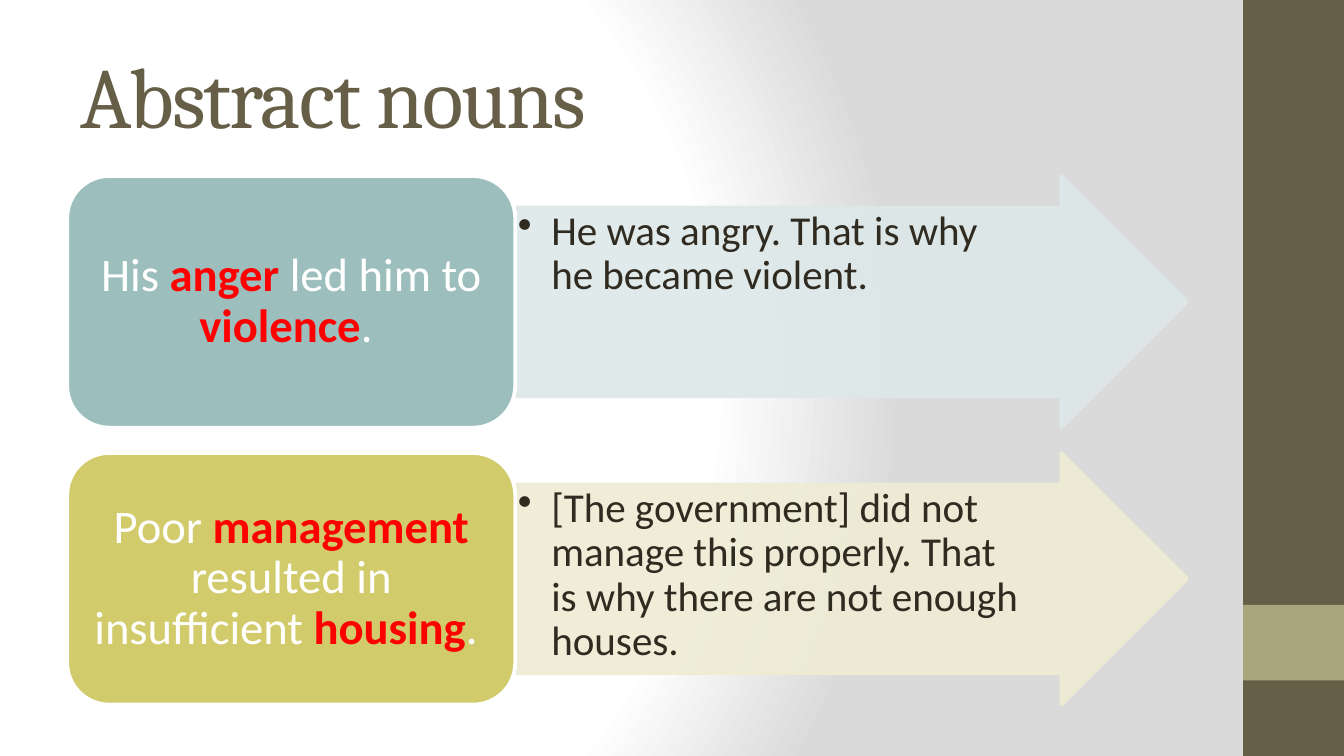
from pptx import Presentation
from pptx.dml.color import RGBColor
from pptx.enum.shapes import MSO_SHAPE
from pptx.enum.text import MSO_ANCHOR, PP_ALIGN
from pptx.oxml import parse_xml
from pptx.oxml.ns import nsdecls
from pptx.oxml.xmlchemy import OxmlElement
from pptx.util import Pt

RECTANGLE = MSO_SHAPE.RECTANGLE
ROUNDED = MSO_SHAPE.ROUNDED_RECTANGLE
RIGHT_ARROW = MSO_SHAPE.RIGHT_ARROW
MIDDLE, TOP = MSO_ANCHOR.MIDDLE, MSO_ANCHOR.TOP
CENTER, LEFT = PP_ALIGN.CENTER, PP_ALIGN.LEFT

BROWN = RGBColor(0x67, 0x5E, 0x47)
KHAKI = RGBColor(0xA9, 0xA5, 0x7C)
DARK = RGBColor(0x2F, 0x2B, 0x20)
WHITE = RGBColor(0xFF, 0xFF, 0xFF)
RED = RGBColor(0xFF, 0x00, 0x00)
TEAL = RGBColor(0x9C, 0xBE, 0xBD)
PALE_TEAL = RGBColor(0xDE, 0xE8, 0xE8)
OLIVE = RGBColor(0xD2, 0xCB, 0x6C)
PALE_OLIVE = RGBColor(0xEE, 0xEC, 0xD4)

SLIDE_W, SLIDE_H = 720, 405
SIDEBAR_X = 666
ROW_X, ROW_W, ROW_H = 36, 600, 134.8
ROW_TOP, ROW_PITCH = 94.3, 148.4
CARD_SHARE = 0.4

# Sentence pieces are (text, highlighted)
EXAMPLES = [
    ([("His ", False), ("anger ", True), ("led him to ", False),
      ("violence", True), (". ", False)],
     "He was angry. That is why he became violent.", TEAL, PALE_TEAL),
    ([("Poor ", False), ("management ", True), ("resulted in insufficient ", False),
      ("housing", True), (". ", False)],
     "[The government] did not manage this properly. That is why there are "
     "not enough houses.", OLIVE, PALE_OLIVE),
]


def apply_format(target, values):
    for name, value in values.items():
        setattr(target, name, value)


def set_frame(frame, anchor, left, top, right, bottom):
    apply_format(frame, {
        "word_wrap": True, "vertical_anchor": anchor,
        "margin_left": Pt(left), "margin_top": Pt(top),
        "margin_right": Pt(right), "margin_bottom": Pt(bottom)})


def add_run(paragraph, text, color, size, font="Calibri", bold=False):
    run = paragraph.add_run()
    run.text = text
    apply_format(run.font, {"name": font, "size": Pt(size), "bold": bold})
    run.font.color.rgb = color
    return run


def add_block(slide, preset, box, fill, line=None):
    block = slide.shapes.add_shape(preset, *map(Pt, box))
    block.shadow.inherit = False
    block.fill.solid()
    block.fill.fore_color.rgb = fill
    if line is None:
        block.line.fill.background()
    else:
        block.line.color.rgb = line
        block.line.width = Pt(2)
    return block


def set_background(slide):
    """Fill the slide with a circular white to grey gradient."""
    stops = "".join(
        f'<a:gs pos="{position}000"><a:srgbClr val="{color}"/></a:gs>'
        for position, color in [(0, "FFFFFF"), (75, "FFFFFF"), (100, "DADADA")])
    slide.element.cSld.insert(0, parse_xml(
        f'<p:bg {nsdecls("p", "a")}><p:bgPr><a:gradFill rotWithShape="1">'
        f'<a:gsLst>{stops}</a:gsLst><a:path path="circle">'
        '<a:fillToRect l="20000" t="50000" r="100000" b="50000"/></a:path>'
        '</a:gradFill><a:effectLst/></p:bgPr></p:bg>'))


def add_sidebar(slide, x, y, width, height):
    add_block(slide, RECTANGLE, (x, y, width, height), BROWN)
    add_block(slide, RECTANGLE, (x, y + 0.8 * height, width, 0.1 * height), KHAKI)


def add_title(slide, x, y, width, height):
    title = slide.shapes.add_textbox(*map(Pt, (x, y, width, height)))
    set_frame(title.text_frame, MIDDLE, 7.2, 3.6, 7.2, 3.6)
    run = add_run(title.text_frame.paragraphs[0], "Abstract nouns", BROWN, 46, "Cambria")
    run.font._element.set("spc", "-100")


def add_explanation(slide, box, text, color):
    """Add the translucent arrow with its bulleted explanation."""
    arrow = add_block(slide, RIGHT_ARROW, box, color, color)
    arrow.adjustments[0] = 0.75
    for swatch in arrow.element.spPr.xpath(".//a:srgbClr"):
        alpha = OxmlElement("a:alpha")
        alpha.set("val", "90000")
        swatch.append(alpha)
    set_frame(arrow.text_frame, TOP, 1.4, 1.4, 35, 1.4)
    paragraph = arrow.text_frame.paragraphs[0]
    apply_format(paragraph, {"alignment": LEFT, "line_spacing": 0.9, "level": 1})
    properties = paragraph._p.get_or_add_pPr()
    properties.set("marL", str(Pt(18)))
    properties.set("indent", str(-Pt(18)))
    bullet = OxmlElement("a:buChar")
    bullet.set("char", "•")
    properties.append(bullet)
    add_run(paragraph, text, DARK, 22)


def add_sentence(slide, box, pieces, color):
    card = add_block(slide, ROUNDED, box, color, WHITE)
    set_frame(card.text_frame, MIDDLE, 7.2, 3.6, 7.2, 3.6)
    paragraph = card.text_frame.paragraphs[0]
    apply_format(paragraph, {"alignment": CENTER, "line_spacing": 0.9})
    for text, highlighted in pieces:
        add_run(paragraph, text, RED if highlighted else WHITE, 25, bold=highlighted)


def add_example(slide, x, y, width, height, example):
    pieces, explanation, card_color, arrow_color = example
    card_w = CARD_SHARE * width
    add_explanation(slide, (x + card_w, y, width - card_w, height),
                    explanation, arrow_color)
    add_sentence(slide, (x, y, card_w, height), pieces, card_color)


def main():
    presentation = Presentation()
    presentation.slide_width, presentation.slide_height = Pt(SLIDE_W), Pt(SLIDE_H)
    slide = presentation.slides.add_slide(presentation.slide_layouts[6])
    set_background(slide)
    add_sidebar(slide, SIDEBAR_X, 0, SLIDE_W - SIDEBAR_X, SLIDE_H)
    add_title(slide, ROW_X, 16.6, ROW_W, 67.7)
    for index, example in enumerate(EXAMPLES):
        add_example(slide, ROW_X, ROW_TOP + index * ROW_PITCH, ROW_W, ROW_H, example)
    presentation.save("out.pptx")


if __name__ == "__main__":
    main()
